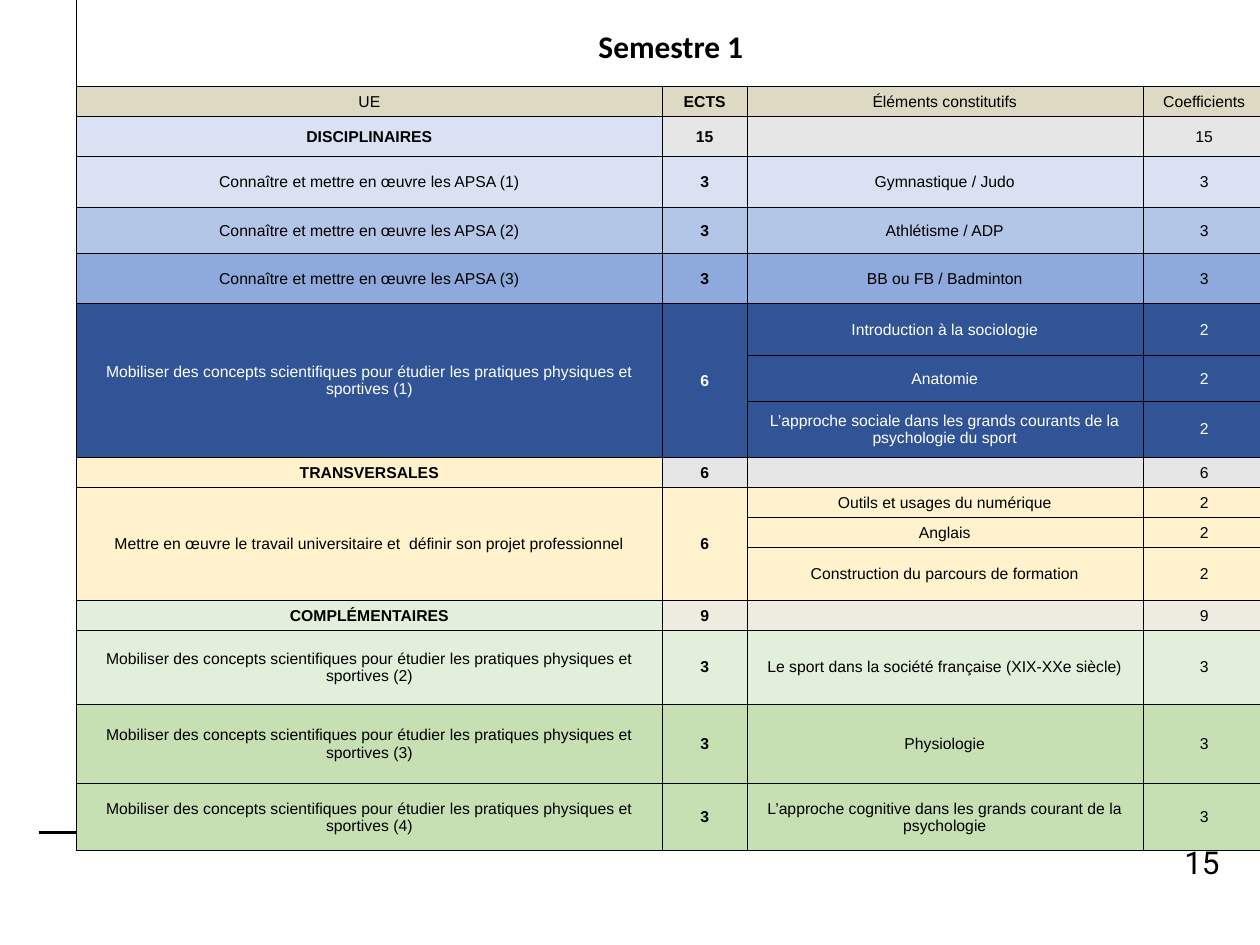
from dataclasses import dataclass

from lxml import etree
from pptx import Presentation
from pptx.dml.color import RGBColor
from pptx.enum import shapes, text
from pptx.oxml import ns
from pptx.util import Inches, Pt


@dataclass(frozen=True)
class Theme:
    black: str = "000000"
    white: str = "FFFFFF"
    header: str = "DDD9C3"
    grey: str = "E7E6E6"
    beige: str = "EEECE1"
    pale_blue: str = "D9E1F2"
    light_blue: str = "B4C6E7"
    mid_blue: str = "8EA9DB"
    dark_blue: str = "305496"
    yellow: str = "FFF2CC"
    pale_green: str = "E2EFDA"
    green: str = "C6E0B4"
    body_font: str = "Arial"
    title_font: str = "Calibri"
    number_font: str = "Roboto"
    body_size: int = 14
    large_size: int = 28
    thin: float = 0.5
    thick: float = 1
    rule: float = 2


THEME = Theme()
COLUMN_WIDTHS = (7.26, 1.04, 4.9, 1.52)
TITLE_HEIGHT = 1.08
APSA = "Connaître et mettre en œuvre les APSA"
CONCEPTS = "Mobiliser des concepts scientifiques pour étudier les pratiques physiques et sportives"
PROJECT = "Mettre en œuvre le travail universitaire et  définir son projet professionnel"

# height, unit fill, fill of the other columns, texts (None continues the cell above)
ROWS = (
    (0.37, THEME.header, THEME.header, ("UE", "ECTS", "Éléments constitutifs", "Coefficients")),
    (0.49, THEME.pale_blue, THEME.grey, ("DISCIPLINAIRES", "15", "", "15")),
    (0.64, THEME.pale_blue, THEME.pale_blue, (f"{APSA} (1)", "3", "Gymnastique / Judo", "3")),
    (0.57, THEME.light_blue, THEME.light_blue, (f"{APSA} (2)", "3", "Athlétisme / ADP", "3")),
    (0.61, THEME.mid_blue, THEME.mid_blue, (f"{APSA} (3)", "3", "BB ou FB / Badminton", "3")),
    (0.65, THEME.dark_blue, THEME.dark_blue,
     (f"{CONCEPTS} (1)", "6", "Introduction à la sociologie", "2")),
    (0.56, THEME.dark_blue, THEME.dark_blue, (None, None, "Anatomie", "2")),
    (0.7, THEME.dark_blue, THEME.dark_blue,
     (None, None, "L’approche sociale dans les grands courants de la psychologie du sport", "2")),
    (0.37, THEME.yellow, THEME.grey, ("TRANSVERSALES", "6", "", "6")),
    (0.37, THEME.yellow, THEME.yellow, (PROJECT, "6", "Outils et usages du numérique", "2")),
    (0.37, THEME.yellow, THEME.yellow, (None, None, "Anglais", "2")),
    (0.66, THEME.yellow, THEME.yellow, (None, None, "Construction du parcours de formation", "2")),
    (0.37, THEME.pale_green, THEME.beige, ("COMPLÉMENTAIRES", "9", "", "9")),
    (0.91, THEME.pale_green, THEME.pale_green,
     (f"{CONCEPTS} (2)", "3", "Le sport dans la société française (XIX-XXe siècle)", "3")),
    (0.98, THEME.green, THEME.green, (f"{CONCEPTS} (3)", "3", "Physiologie", "3")),
    (0.84, THEME.green, THEME.green,
     (f"{CONCEPTS} (4)", "3", "L’approche cognitive dans les grands courant de la psychologie", "3")),
)


def style_font(font, name, size, color, bold=False):
    font.name = name
    font.size = Pt(size)
    font.bold = bold
    font.color.rgb = RGBColor.from_string(color)


def add_border(cell, side, width):
    properties = cell._tc.get_or_add_tcPr()
    line = etree.SubElement(properties, ns.qn(f"a:ln{side}"), w=str(Pt(width)))
    fill = etree.SubElement(line, ns.qn("a:solidFill"))
    etree.SubElement(fill, ns.qn("a:srgbClr"), val=THEME.black)


def frame_cell(cell, right_edge=False, top_edge=False, bottom_edge=False):
    edges = {"L": False, "R": right_edge, "T": top_edge, "B": bottom_edge}
    for side, is_edge in edges.items():
        add_border(cell, side, THEME.thick if is_edge else THEME.thin)


def write_cell(cell, words, font, size, color, bold):
    cell.margin_left = cell.margin_right = cell.margin_top = Inches(0.01)
    cell.margin_bottom = 0
    cell.vertical_anchor = text.MSO_ANCHOR.MIDDLE
    cell.text = words
    para = cell.text_frame.paragraphs[0]
    para.alignment = text.PP_ALIGN.CENTER
    style_font(para.font, font, size, color, bold)


def fill_title(table):
    last = len(COLUMN_WIDTHS) - 1
    title = table.cell(0, 0)
    title.merge(table.cell(0, last))
    for column in range(last + 1):
        cell = table.cell(0, column)
        frame_cell(cell, right_edge=True, top_edge=True)
        cell.fill.background()
    write_cell(title, "Semestre 1", THEME.title_font, THEME.large_size, THEME.black, True)
    title.vertical_anchor = text.MSO_ANCHOR.BOTTOM
    title.margin_bottom = Inches(0.24)


def fill_row(table, row, unit_fill, other_fill, words):
    ink = THEME.white if unit_fill == THEME.dark_blue else THEME.black
    is_section = words[2] == ""
    for column, word in enumerate(words):
        cell = table.cell(row, column)
        frame_cell(cell, right_edge=column == len(words) - 1, bottom_edge=row == len(ROWS))
        cell.fill.solid()
        cell.fill.fore_color.rgb = RGBColor.from_string(other_fill if column else unit_fill)
        bold = column == 1 or (column == 0 and is_section)
        write_cell(cell, word or "", THEME.body_font, THEME.body_size, ink, bold)


def merge_units(table):
    starts = [row for row, entry in enumerate(ROWS, 1) if entry[3][0] is not None]
    for start, following in zip(starts, starts[1:] + [len(ROWS) + 1]):
        if following - start > 1:
            for column in (0, 1):
                table.cell(start, column).merge(table.cell(following - 1, column))


def add_programme(page):
    heights = [TITLE_HEIGHT] + [entry[0] for entry in ROWS]
    frame = page.shapes.add_table(
        len(heights), len(COLUMN_WIDTHS), Inches(0.94), Inches(-0.01),
        Inches(sum(COLUMN_WIDTHS)), Inches(sum(heights)))
    table = frame.table
    table.first_row = table.horz_banding = False
    for column, width in zip(table.columns, COLUMN_WIDTHS):
        column.width = Inches(width)
    for row, height in zip(table.rows, heights):
        row.height = Inches(height)
    fill_title(table)
    for row, (_, unit_fill, other_fill, words) in enumerate(ROWS, 1):
        fill_row(table, row, unit_fill, other_fill, words)
    merge_units(table)


def add_rule(page):
    rule = page.shapes.add_connector(
        shapes.MSO_CONNECTOR.STRAIGHT, Inches(0.48), Inches(10.3), Inches(15.08), Inches(10.3))
    rule.line.color.rgb = RGBColor.from_string(THEME.black)
    rule.line.width = Pt(THEME.rule)
    etree.SubElement(rule._element.spPr, ns.qn("a:effectLst"))


def add_page_number(page, number):
    box = page.shapes.add_textbox(Inches(12.8), Inches(10.43), Inches(2.29), Inches(0.47))
    frame = box.text_frame
    frame.word_wrap = True
    frame.margin_left = frame.margin_right = frame.margin_top = frame.margin_bottom = 0
    frame.vertical_anchor = text.MSO_ANCHOR.MIDDLE
    para = frame.paragraphs[0]
    para.text = number
    para.alignment = text.PP_ALIGN.RIGHT
    style_font(para.font, THEME.number_font, THEME.large_size, THEME.black)


def main():
    deck = Presentation()
    deck.slide_width = Inches(15.59)
    deck.slide_height = Inches(11.69)
    page = deck.slides.add_slide(deck.slide_layouts[6])
    add_rule(page)
    add_page_number(page, "15")
    add_programme(page)
    deck.save("out.pptx")


if __name__ == "__main__":
    main()
